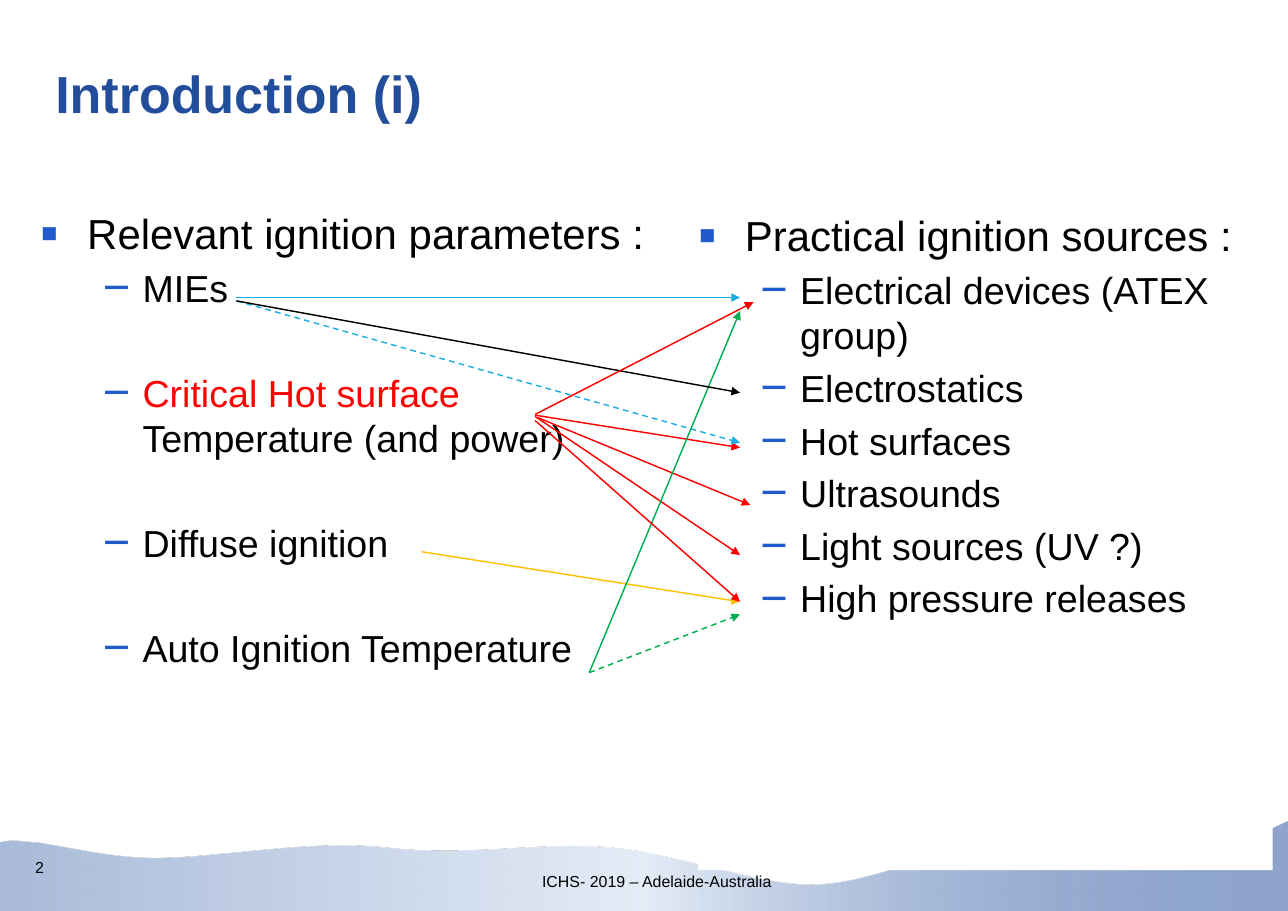
from lxml.etree import SubElement
from pptx import Presentation
from pptx.dml.color import RGBColor
from pptx.enum.dml import MSO_LINE
from pptx.enum.shapes import MSO_CONNECTOR
from pptx.enum.text import MSO_ANCHOR
from pptx.oxml import parse_xml
from pptx.oxml.ns import nsdecls, qn
from pptx.util import Cm, Pt

HEX = {
    "black": "000000", "white": "FFFFFF", "navy": "224D9B", "mark": "215ACB",
    "red": "FF0000", "sky": "1CADE4", "green": "00B050", "gold": "FFC000",
    "mist": "A8BAD9", "pale": "E4ECF6",
}
INCH = 2.54
WIDE = INCH * 99 / 8
HIGH = INCH * 35 / 4
HEAD = {"size": 29, "mark": "▪", "left": 1.14, "hang": 1.14}
ITEM = {"size": 26, "mark": "−", "left": 2.49, "hang": 0.97}
GAP = 5.2
WIDE_GAP = 41.4

WAVE_START = (0, 0.53)
WAVE_CURVES = [
    ((0.61, 0.33), (2.18, 0.89), (3.76, 0.91)),
    ((5.33, 0.91), (7.57, 0.46), (9.42, 0.66)),
    ((11.43, 0.89), (13.18, 0.51), (14.91, 0.66)),
    ((16.61, 0.81), (18.29, 1.52), (19.74, 1.55)),
    ((21.21, 1.55), (22.33, 0.84), (23.65, 0.79)),
    ((24.97, 0.71), (26.62, 1.12), (27.69, 1.12)),
    ((28.75, 1.09), (29.46, 0.91), (30.02, 0.66)),
]
ARROWS = [
    ("gold", (4.52, 6.2), (12.29, 7.42), False),
    ("green", (8.61, 9.15), (12.29, 7.73), True),
    ("red", (7.29, 2.87), (12.29, 3.66), False),
    ("red", (7.36, 2.93), (12.54, 5.06), False),
    ("red", (7.29, 2.9), (12.29, 6.28), False),
    ("sky", (0, 0.08), (12.29, 3.54), True),
    ("sky", (0, 0), (12.29, 0), False),
    ("green", (8.61, 9.15), (12.29, 0.33), False),
    ("black", (0, 0.08), (12.29, 2.32), False),
    ("red", (7.29, 3), (12.29, 7.42), False),
    ("red", (7.29, 2.85), (12.62, 0.11), False),
]


def color(name):
    return RGBColor.from_string(HEX[name])


def add_frame(slide, box, anchor=MSO_ANCHOR.TOP, fill=None, inset=0):
    shape = slide.shapes.add_textbox(*map(Cm, box))
    if fill:
        shape.fill.solid()
        shape.fill.fore_color.rgb = color(fill)
    frame = shape.text_frame
    frame.word_wrap = True
    frame.vertical_anchor = anchor
    frame.margin_left = frame.margin_right = frame.margin_bottom = 0
    frame.margin_top = Cm(inset)
    return frame


def add_mark(para, mark, left, hang):
    props = para._p.get_or_add_pPr()
    props.set("marL", str(Cm(left)))
    props.set("indent", str(-Cm(hang)))
    tint = SubElement(props, qn("a:buClr"))
    SubElement(tint, qn("a:srgbClr"), val=HEX["mark"])
    SubElement(props, qn("a:buSzPct"), val="125000")
    SubElement(props, qn("a:buFont"), typeface="Arial")
    SubElement(props, qn("a:buChar"), char=mark)


def write(frame, text, size=11, tint="black", bold=False, mark=None,
          left=0, hang=0, before=0, first=False):
    para = frame.paragraphs[0] if first else frame.add_paragraph()
    if mark:
        add_mark(para, mark, left, hang)
    if before:
        para.space_before = Pt(before)
    runs = [(text, tint)] if isinstance(text, str) else text
    for words, shade in runs:
        run = para.add_run()
        run.text = words
        run.font.name = "Arial"
        run.font.size = Pt(size)
        run.font.bold = bold
        run.font.color.rgb = color(shade)


def draw_wave(slide, box, steps=16):
    left, top, width, height = box
    points = [WAVE_START]
    for one, two, end in WAVE_CURVES:
        start = points[-1]
        for step in range(1, steps + 1):
            t = step / steps
            u = 1 - t
            points.append(tuple(
                u**3 * a + 3 * u * u * t * b + 3 * u * t * t * c + t**3 * d
                for a, b, c, d in zip(start, one, two, end)))
    points += [(width, 0), (width, height)]
    path = [(Cm(left + x), Cm(top + y)) for x, y in points]
    pen = slide.shapes.build_freeform(Cm(left), Cm(top + height))
    pen.add_line_segments(path, close=True)
    wave = pen.convert_to_shape()
    wave.shadow.inherit = False
    wave.line.fill.background()
    wave.fill.gradient()
    wave.fill.gradient_angle = 0
    stops = wave._element.spPr.find(qn("a:gradFill")).find(qn("a:gsLst"))
    for stop in list(stops):
        stops.remove(stop)
    for place, name, alpha in [(0, "mist", 100), (50, "pale", 100),
                               (100, "navy", 50)]:
        stops.append(parse_xml(
            f'<a:gs {nsdecls("a")} pos="{place * 1000}">'
            f'<a:srgbClr val="{HEX[name]}">'
            f'<a:alpha val="{alpha * 1000}"/></a:srgbClr></a:gs>'))


def draw_foot(slide, box):
    left, top, width, height = box
    draw_wave(slide, box)
    page = add_frame(slide, (left + 0.86, top + 0.9, 1.12, 0.69))
    write(page, "2", first=True)
    event = add_frame(slide, (left + 13.23, top + 1.24, 16.74, 0.58))
    write(event, "ICHS- 2019 – Adelaide-Australia", first=True)


def draw_title(slide, box):
    frame = add_frame(slide, box, anchor=MSO_ANCHOR.BOTTOM)
    write(frame, "Introduction (i)", size=36, tint="navy", bold=True, first=True)


def draw_list(slide, box, head, items, gap=GAP, inset=0):
    frame = add_frame(slide, box, fill="white", inset=inset)
    write(frame, head, first=True, **HEAD)
    for index, item in enumerate(items):
        write(frame, item, before=gap if index else GAP, **ITEM)


def draw_links(slide, box):
    left, top = box[:2]
    for tint, start, end, dashed in ARROWS:
        ends = [Cm(v) for x, y in (start, end) for v in (left + x, top + y)]
        link = slide.shapes.add_connector(MSO_CONNECTOR.STRAIGHT, *ends)
        link.line.color.rgb = color(tint)
        link.line.width = Pt(1)
        if dashed:
            link.line.dash_style = MSO_LINE.DASH
        props = link._element.spPr
        SubElement(props.find(qn("a:ln")), qn("a:tailEnd"), type="triangle")
        SubElement(props, qn("a:effectLst"))


def main():
    deck = Presentation()
    deck.slide_width = Cm(WIDE)
    deck.slide_height = Cm(HIGH)
    slide = deck.slides.add_slide(deck.slide_layouts[6])
    draw_foot(slide, (0, 20.02, 31.45, 2.21))
    draw_title(slide, (1.35, 1.2, 27.69, 1.83))
    draw_list(slide, (0.99, 5.06, 15.34, 11.73),
              "Relevant ignition parameters :",
              ["MIEs",
               [("Critical Hot surface ", "red"),
                ("Temperature (and power)", "black")],
               "Diffuse ignition",
               "Auto Ignition Temperature"], gap=WIDE_GAP)
    draw_list(slide, (17.04, 3.81, 14.02, 17.42),
              "Practical ignition sources :",
              ["Electrical devices (ATEX group)", "Electrostatics",
               "Hot surfaces", "Ultrasounds", "Light sources (UV ?)",
               "High pressure releases"], inset=1.3)
    draw_links(slide, (5.77, 7.26, 12.62, 9.15))
    deck.save("out.pptx")


if __name__ == "__main__":
    main()
